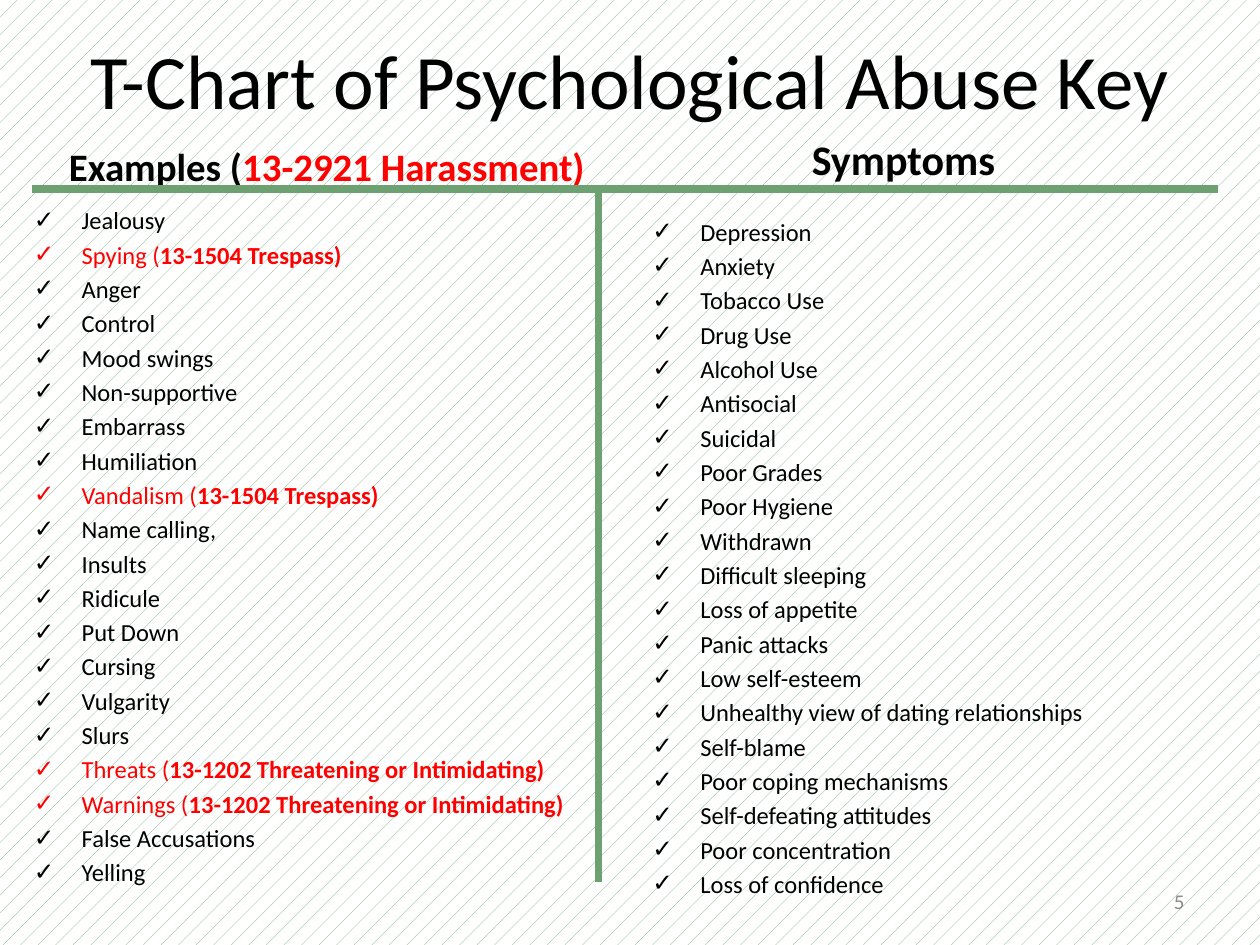
from lxml import etree
from pptx import Presentation
from pptx.dml.color import RGBColor
from pptx.enum.dml import MSO_PATTERN
from pptx.enum.shapes import MSO_CONNECTOR
from pptx.enum.text import MSO_ANCHOR, MSO_AUTO_SIZE, PP_ALIGN
from pptx.oxml.ns import qn
from pptx.util import Inches, Pt

STRAIGHT = MSO_CONNECTOR.STRAIGHT
DOTS = MSO_PATTERN.PERCENT_5
TOP, MIDDLE, BOTTOM = MSO_ANCHOR.TOP, MSO_ANCHOR.MIDDLE, MSO_ANCHOR.BOTTOM
LEFT, CENTER, RIGHT = PP_ALIGN.LEFT, PP_ALIGN.CENTER, PP_ALIGN.RIGHT

THEME = {
    "font": "Calibri",
    "text": "000000", "law": "FF0000", "number": "8C8C8C",
    "rule": "6EA172", "pattern": "72A376", "paper": "FFFFFF",
    "title_size": 44, "left_head_size": 22.2, "right_head_size": 24,
    "item_size": 14, "number_size": 12, "rule_width": 4.5,
    "item_gap": 2.8,
}

TITLE = "T-Chart of Psychological Abuse Key"
PAGE = "5"
TRESPASS = "13-1504 Trespass)"
THREATENING = "13-1202 Threatening or Intimidating)"
EXAMPLES = [
    "Jealousy", ("Spying (", TRESPASS), "Anger", "Control", "Mood swings",
    "Non-supportive", "Embarrass", "Humiliation", ("Vandalism (", TRESPASS),
    "Name calling,", "Insults", "Ridicule", "Put Down", "Cursing", "Vulgarity",
    "Slurs", ("Threats (", THREATENING), ("Warnings (", THREATENING),
    "False Accusations", "Yelling",
]
SYMPTOMS = [
    "Depression", "Anxiety", "Tobacco Use", "Drug Use", "Alcohol Use",
    "Antisocial", "Suicidal", "Poor Grades", "Poor Hygiene", "Withdrawn",
    "Difficult sleeping", "Loss of appetite", "Panic attacks",
    "Low self-esteem", "Unhealthy view of dating relationships", "Self-blame",
    "Poor coping mechanisms", "Self-defeating attitudes",
    "Poor concentration", "Loss of confidence",
]
COLUMNS = [
    {"head": [("Examples (", "text", True), ("13-2921 Harassment) ", "law", True)],
     "head_box": (0.42, 1, 4.42, 0.55), "head_size": "left_head_size",
     "items": EXAMPLES, "items_box": (0.17, 1.58, 4.83, 5.67)},
    {"head": [("Symptoms", "text", True)],
     "head_box": (4.96, 0.81, 4.42, 0.7), "head_size": "right_head_size",
     "items": SYMPTOMS, "items_box": (5.08, 1.67, 4.42, 5.58)},
]
RULES = [(0.25, 1.5, 9.67, 1.5), (4.75, 1.5, 4.75, 7)]


def color(name):
    return RGBColor.from_string(THEME[name])


def add_check(p):
    pPr = p._p.get_or_add_pPr()
    pPr.set("marL", str(Inches(0.38)))
    pPr.set("indent", str(Inches(-0.38)))
    etree.SubElement(pPr, qn("a:buFont")).set("typeface", THEME["font"])
    etree.SubElement(pPr, qn("a:buChar")).set("char", "✓")


def write(sp, paragraphs, *, box, size, align=LEFT, anchor=TOP, check=False):
    sp.left, sp.top, sp.width, sp.height = map(Inches, box)
    tf = sp.text_frame
    tf.word_wrap = True
    tf.auto_size = MSO_AUTO_SIZE.NONE
    tf.vertical_anchor = anchor
    for i, runs in enumerate(paragraphs):
        p = tf.add_paragraph() if i else tf.paragraphs[0]
        p.alignment = align
        if check:
            p.space_before = Pt(THEME["item_gap"])
            add_check(p)
        for text, ink, bold in runs:
            r = p.add_run()
            r.text = text
            r.font.name = THEME["font"]
            r.font.size = Pt(THEME[size])
            r.font.bold = bold
            r.font.color.rgb = color(ink)


def item_runs(item):
    if isinstance(item, str):
        return [(item, "text", False)]
    behaviour, law = item
    return [(behaviour, "law", False), (law, "law", True)]


def add_text(s, paragraphs, **fmt):
    write(s.shapes.add_textbox(0, 0, 0, 0), paragraphs, **fmt)


def add_rule(s, ends):
    line = s.shapes.add_connector(STRAIGHT, *map(Inches, ends))
    line.line.color.rgb = color("rule")
    line.line.width = Pt(THEME["rule_width"])
    etree.SubElement(line._element.spPr, qn("a:effectLst"))


def main():
    prs = Presentation()
    prs.slide_width, prs.slide_height = Inches(10), Inches(7.5)
    s = prs.slides.add_slide(prs.slide_layouts[5])
    fill = s.background.fill
    fill.patterned()
    fill.pattern = DOTS
    fill.fore_color.rgb = color("pattern")
    fill.back_color.rgb = color("paper")

    write(s.shapes.title, [[(TITLE, "text", False)]], box=(0.5, 0, 9, 1.25),
          size="title_size", align=CENTER, anchor=MIDDLE)
    for col in COLUMNS:
        add_text(s, [col["head"]], box=col["head_box"], size=col["head_size"],
                 align=CENTER, anchor=BOTTOM)
        add_text(s, [item_runs(item) for item in col["items"]],
                 box=col["items_box"], size="item_size", check=True)
    add_text(s, [[(PAGE, "number", False)]], box=(7.17, 6.95, 2.33, 0.4),
             size="number_size", align=RIGHT, anchor=MIDDLE)
    for ends in RULES:
        add_rule(s, ends)
    prs.save("out.pptx")


if __name__ == "__main__":
    main()
